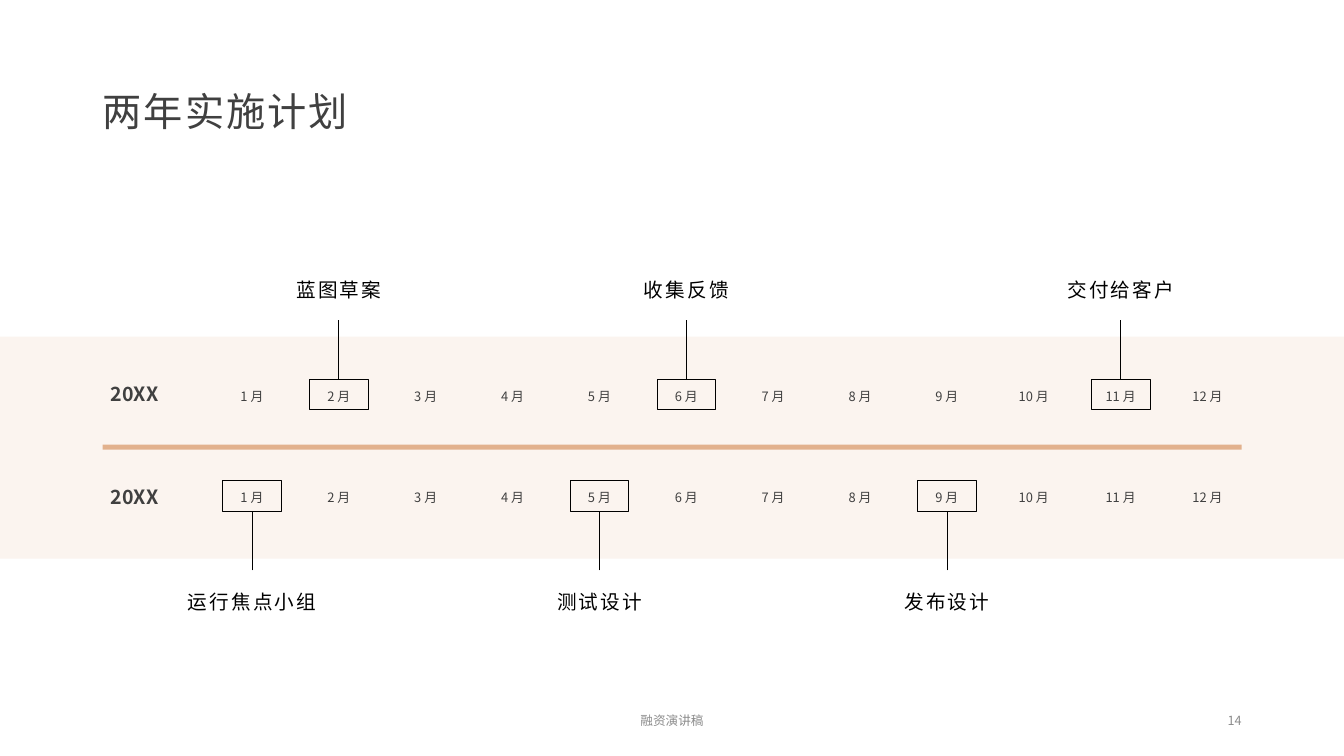
from pptx import Presentation
from pptx.dml.color import RGBColor
from pptx.enum.shapes import MSO_CONNECTOR, MSO_SHAPE
from pptx.enum.text import MSO_ANCHOR, PP_ALIGN
from pptx.util import Pt
from lxml.etree import SubElement
from pptx.oxml.ns import qn


def tint(code):
    return RGBColor.from_string(code)


class Deck:
    font = "Noto Sans CJK SC"
    ink, dark, grey = "000000", "404040", "8C8C8C"
    band, bar = "FBF4EF", "E2B18D"

    def __init__(self, slide):
        self.slide = slide

    def put(self, frame, words, size, color, align=PP_ALIGN.LEFT,
            anchor=MSO_ANCHOR.MIDDLE, lead=1.0, before=0, gap=0, bold=False):
        frame.word_wrap = True
        frame.vertical_anchor = anchor
        para = frame.paragraphs[0]
        para.alignment = align
        para.line_spacing = lead
        para.space_before = Pt(before)
        run = para.add_run()
        run.text = words
        run.font.size = Pt(size)
        run.font.name = self.font
        run.font.bold = bold
        run.font.color.rgb = tint(color)
        props = run.font._element
        SubElement(props, qn("a:ea")).set("typeface", self.font)
        if gap:
            props.set("spc", str(int(gap * 100)))

    def title(self, words, x, y, w, h):
        head = self.slide.shapes.title
        head.left, head.top, head.width, head.height = Pt(x), Pt(y), Pt(w), Pt(h)
        self.put(head.text_frame, words, 28, self.dark, lead=0.9, gap=1.5)

    def text(self, words, x, y, w, h, size, color, **style):
        box = self.slide.shapes.add_textbox(Pt(x), Pt(y), Pt(w), Pt(h))
        self.put(box.text_frame, words, size, color, **style)

    def rect(self, x, y, w, h, fill=None, line=None):
        box = self.slide.shapes.add_shape(
            MSO_SHAPE.RECTANGLE, Pt(x), Pt(y), Pt(w), Pt(h))
        box.shadow.inherit = False
        if fill:
            box.fill.solid()
            box.fill.fore_color.rgb = tint(fill)
        else:
            box.fill.background()
        if line:
            box.line.color.rgb = tint(line)
            box.line.width = Pt(0.5)
        else:
            box.line.fill.background()
        return box

    def stem(self, x, start, end, box, side):
        line = self.slide.shapes.add_connector(
            MSO_CONNECTOR.STRAIGHT, Pt(x), Pt(start), Pt(x), Pt(end))
        line.line.color.rgb = tint(self.ink)
        line.line.width = Pt(0.5)
        SubElement(line._element.spPr, qn("a:effectLst"))
        line.end_connect(box, side)


def main():
    prs = Presentation()
    prs.slide_width, prs.slide_height = Pt(960), Pt(540)
    deck = Deck(prs.slides.add_slide(prs.slide_layouts[5]))

    # Background band and divider
    deck.rect(0, 240.5, 960, 158.5, fill=deck.band)
    deck.rect(73.4, 317.5, 813.6, 3.6, fill=deck.bar)
    deck.title("两年实施计划", 66.2, 28.8, 828, 104.4)

    # Month grid and milestone sizes
    first, pitch = 180, 62.05
    cell, box_w, box_h, label_w, label_h = 50.4, 42, 21.8, 162, 44

    # Each year: year top, month top, box top, stem start, label top,
    # label anchor, box side joined, milestones by month
    years = [
        (264.2, 275.8, 270.7, 228.7, 175, MSO_ANCHOR.BOTTOM, 0,
         {2: "蓝图草案", 6: "收集反馈", 11: "交付给客户"}),
        (337.7, 348.5, 343.4, 407.5, 409.7, MSO_ANCHOR.TOP, 2,
         {1: "运行焦点小组", 5: "测试设计", 9: "发布设计"}),
    ]
    for year_y, month_y, box_y, start, label_y, anchor, side, events in years:
        deck.text("20XX", 72, year_y, 57.6, 36, 14, deck.dark,
                  lead=0.9, before=10, bold=True)
        for month in range(1, 13):
            mid = first + (month - 1) * pitch
            deck.text(f"{month} 月", mid - cell / 2, month_y, cell, 15.8, 9.2,
                      deck.dark, align=PP_ALIGN.CENTER, anchor=MSO_ANCHOR.TOP,
                      lead=0.8, before=10)
            if month in events:
                box = deck.rect(mid - box_w / 2, box_y, box_w, box_h, line=deck.ink)
                end = box_y if side == 0 else box_y + box_h
                deck.stem(mid, start, end, box, side)
                deck.text(events[month], mid - label_w / 2, label_y, label_w,
                          label_h, 14, deck.ink, align=PP_ALIGN.CENTER,
                          anchor=anchor, lead=1.5, before=10, gap=1.5)

    # Footer
    deck.text("融资演讲稿", 318, 500.4, 324, 28.8, 9, deck.grey, align=PP_ALIGN.CENTER)
    deck.text("14", 678, 500.4, 216, 28.8, 9, deck.grey, align=PP_ALIGN.RIGHT)

    prs.save("out.pptx")


if __name__ == "__main__":
    main()
